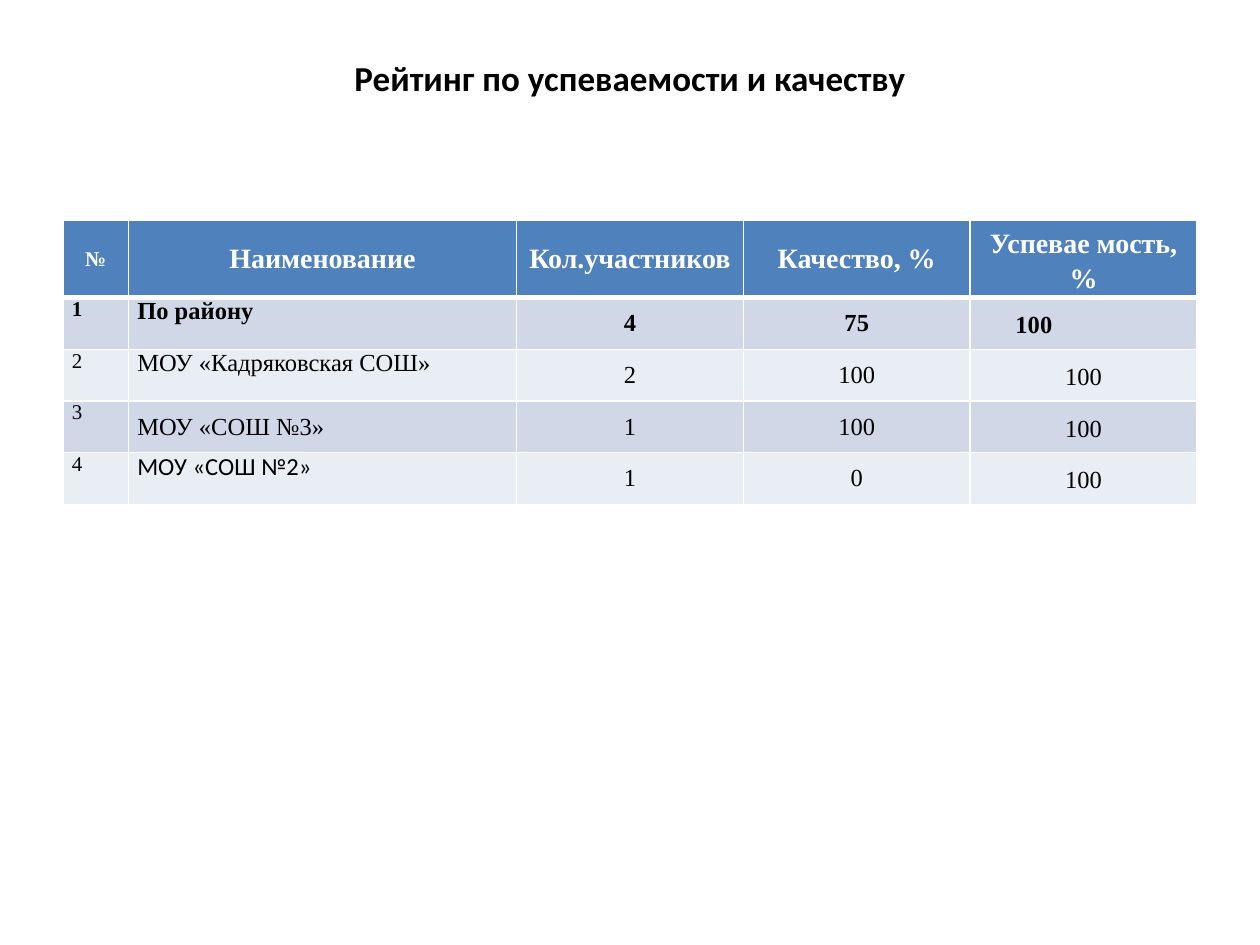
from lxml import etree
from pptx import Presentation
from pptx.dml.color import RGBColor
from pptx.enum.text import MSO_ANCHOR, PP_ALIGN
from pptx.oxml.ns import qn
from pptx.util import Inches, Pt

TOP, MIDDLE = MSO_ANCHOR.TOP, MSO_ANCHOR.MIDDLE
LEFT, CENTER, JUSTIFY = PP_ALIGN.LEFT, PP_ALIGN.CENTER, PP_ALIGN.JUSTIFY

COLORS = {"black": "000000", "white": "FFFFFF", "header": "4F81BD",
          "odd": "D0D8E8", "even": "E9EDF4"}
SERIF, SANS = "Times New Roman", "Calibri"
COLUMN_WIDTHS = (0.52, 3.08, 1.8, 1.8, 1.8)
HEADER_HEIGHT, ROW_HEIGHT = 0.56, 0.41
SIDE_MARGIN, TOTAL_INDENT = 0.07, 0.36
THIN, THICK = 1, 3

RATING = (
    ("№", "Наименование", "Кол.участников", "Качество, %", "Успевае мость, %"),
    ("1", "По району", "4", "75", "100"),
    ("2", "МОУ «Кадряковская СОШ»", "2", "100", "100"),
    ("3", "МОУ «СОШ №3»", "1", "100", "100"),
    ("4", "МОУ «СОШ №2»", "1", "0", "100"),
)
NAME_STYLES = {1: (TOP, JUSTIFY, SERIF), 2: (TOP, JUSTIFY, SERIF),
               3: (MIDDLE, LEFT, SERIF), 4: (TOP, LEFT, SANS)}


def color(name):
    return RGBColor.from_string(COLORS[name])


def style_paragraph(paragraph, font_name, size, color_name, bold, alignment):
    paragraph.alignment = alignment
    paragraph.font.name = font_name
    paragraph.font.size = Pt(size)
    paragraph.font.bold = bold
    paragraph.font.color.rgb = color(color_name)


def add_title(slide, left, top, width, height):
    box = slide.shapes.add_textbox(Inches(left), Inches(top), Inches(width), Inches(height))
    frame = box.text_frame
    frame.word_wrap = True
    frame.vertical_anchor = TOP
    frame.margin_top = Inches(0.15)
    frame.text = "Рейтинг по успеваемости и качеству"
    style_paragraph(frame.paragraphs[0], SANS, 20, "black", True, CENTER)


def set_borders(cell, row):
    properties = cell._tc.get_or_add_tcPr()
    widths = {"lnL": THIN, "lnR": THIN,
              "lnT": THICK if row == 1 else THIN,
              "lnB": THICK if row == 0 else THIN}
    for side, width in widths.items():
        line = etree.SubElement(properties, qn(f"a:{side}"), w=str(Pt(width)))
        fill = etree.SubElement(line, qn("a:solidFill"))
        etree.SubElement(fill, qn("a:srgbClr"), val=COLORS["white"])


def cell_style(row, column):
    if row == 0:
        return MIDDLE, CENTER, SERIF, 12 if column == 0 else 16
    if column == 0:
        return TOP, JUSTIFY, SERIF, 12
    if column == 1:
        return *NAME_STYLES[row], 14
    return MIDDLE, CENTER, SERIF, 14


def fill_cell(cell, text, row, column):
    anchor, alignment, font_name, size = cell_style(row, column)
    last_column = column == len(COLUMN_WIDTHS) - 1
    indented = row == 1 and last_column
    set_borders(cell, row)
    cell.fill.solid()
    cell.fill.fore_color.rgb = color("header" if row == 0 else "odd" if row % 2 else "even")
    cell.margin_left = Inches(TOTAL_INDENT if indented else SIDE_MARGIN)
    cell.margin_right = Inches(SIDE_MARGIN)
    cell.margin_top = cell.margin_bottom = 0
    cell.vertical_anchor = anchor
    cell.text = text
    paragraph = cell.text_frame.paragraphs[0]
    style_paragraph(paragraph, font_name, size, "white" if row == 0 else "black",
                    row < 2, JUSTIFY if indented else alignment)
    if last_column:
        paragraph.line_spacing = 1.15


def add_rating_table(slide, left, top, width):
    height = HEADER_HEIGHT + ROW_HEIGHT * (len(RATING) - 1)
    table = slide.shapes.add_table(len(RATING), len(COLUMN_WIDTHS), Inches(left),
                                   Inches(top), Inches(width), Inches(height)).table
    table.first_row = table.horz_banding = False
    scale = width / sum(COLUMN_WIDTHS)
    for column, share in zip(table.columns, COLUMN_WIDTHS):
        column.width = Inches(share * scale)
    for row, texts in enumerate(RATING):
        table.rows[row].height = Inches(ROW_HEIGHT if row else HEADER_HEIGHT)
        for column, text in enumerate(texts):
            fill_cell(table.cell(row, column), text, row, column)


def main():
    presentation = Presentation()
    presentation.slide_width = Inches(10)
    presentation.slide_height = Inches(7.5)
    slide = presentation.slides.add_slide(presentation.slide_layouts[6])
    add_title(slide, 0.5, 0.3, 9, 0.95)
    add_rating_table(slide, 0.5, 1.75, 9)
    presentation.save("out.pptx")


if __name__ == "__main__":
    main()
